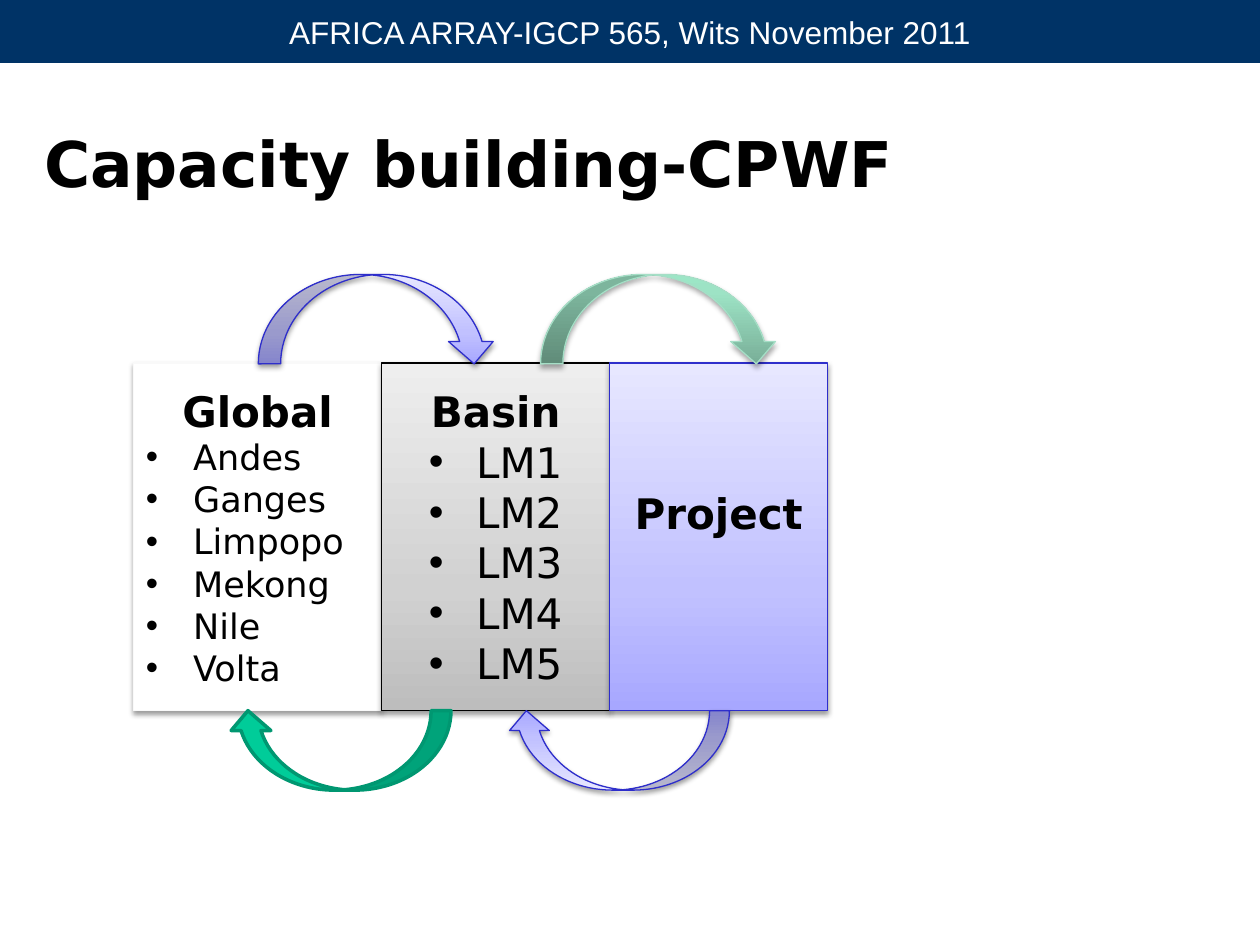
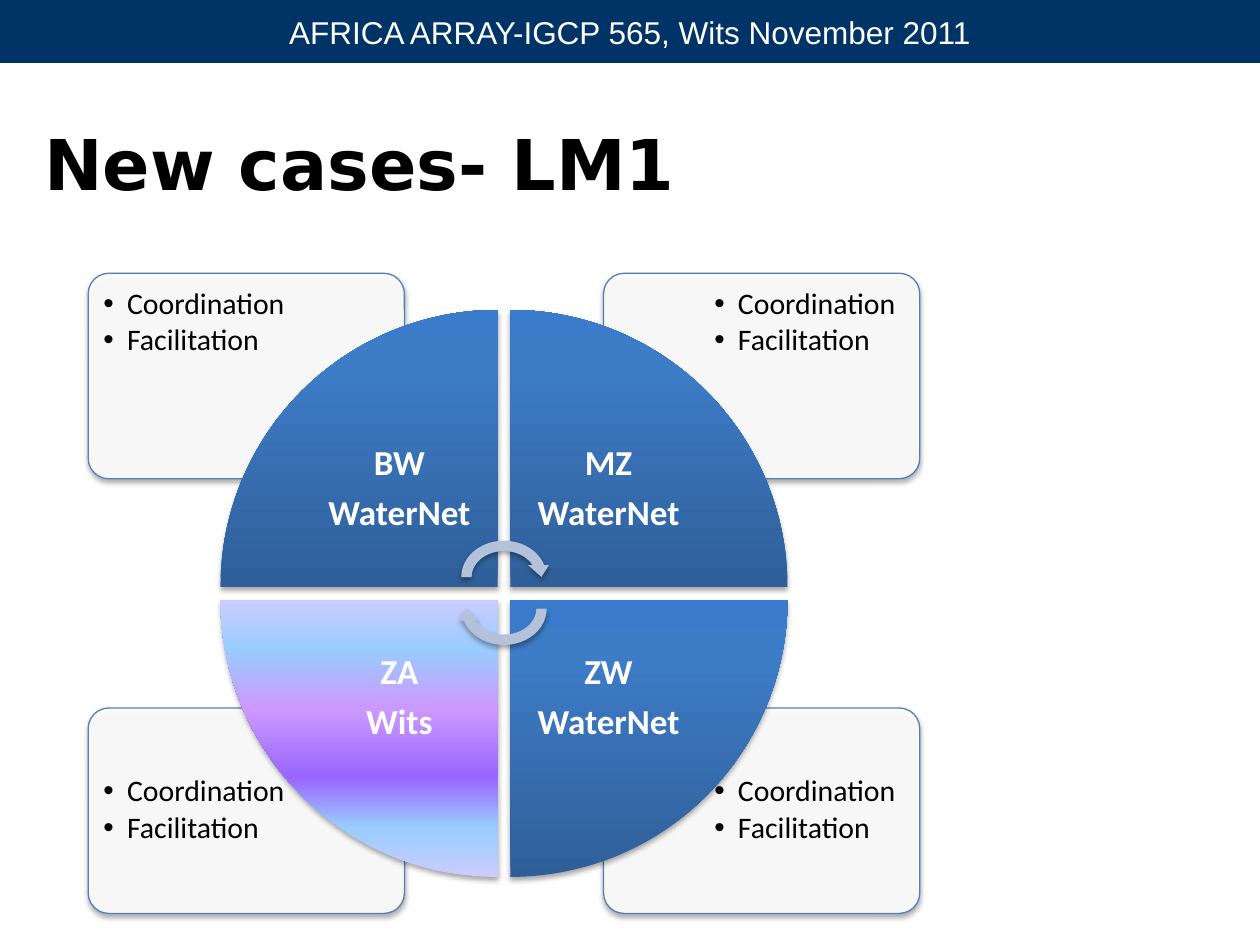
from pptx import Presentation
from pptx import util as u
from pptx.dml.color import RGBColor
from pptx.enum import shapes, text
from pptx.oxml import parse_xml
from pptx.oxml.ns import nsdecls, qn

Pt = u.Pt
Shape, Align, Anchor = shapes.MSO_SHAPE, text.PP_ALIGN, text.MSO_ANCHOR

# Content
EVENT = "AFRICA ARRAY-IGCP 565, Wits November 2011"
LILAC = [(0, "A7A7FF"), (35, "C1C1FF"), (100, "E7E7FF")]
GREY = [(0, "BDBDBD"), (35, "D1D1D1"), (100, "EEEEEE")]
MINT = [(0, "79AF98"), (80, "9DE3C5"), (100, "9CE6C6")]
BLUE = [(0, "2F5F99"), (80, "3D7CC7"), (100, "3A7CCB")]
RAINBOW = [(0, "CCCCFF"), (18, "99CCFF"), (36, "9966FF"),
           (61, "CC99FF"), (82, "99CCFF"), (100, "CCCCFF")]
SOFT, DEEP = (38, 1.6), (35, 1.8)  # shadow opacity in percent, distance

LEVELS = [  # heading, members, member size, member alignment, width, fill, line
    ("Global", ["Andes", "Ganges", "Limpopo", "Mekong", "Nile", "Volta"],
     20, Align.JUSTIFY, 141.8, "FFFFFF", "F9F9F9"),
    ("Basin", ["LM1", "LM2", "LM3", "LM4", "LM5"],
     24, Align.CENTER, 130.3, GREY, "000000"),
    ("Project", [], 24, Align.CENTER, 124.6, LILAC, "2E2ECB"),
]
FORWARD_ARROWS = [  # left, fill, line, line width, shadow
    (147.6, LILAC, "2E2ECB", 0.75, SOFT),
    (308.9, MINT, "A5DEC6", 0.75, DEEP),
]
RETURN_ARROWS = [
    (289.4, LILAC, "2E2ECB", 0.75, SOFT),
    (130.3, "00CC99", "009771", 2, None),
]
CASES = [  # country, partner, column, row, fill; clockwise from top left
    ("BW", "WaterNet", 0, 0, BLUE),
    ("MZ", "WaterNet", 1, 0, BLUE),
    ("ZW", "WaterNet", 1, 1, BLUE),
    ("ZA", "Wits", 0, 1, RAINBOW),
]
ROLES = ["Coordination", "Facilitation"]


def rgb(value):
    return RGBColor.from_string(value)


def points(*lengths):
    return [Pt(round(length, 2)) for length in lengths]


def paint(shape, fill, opacity=100, turns=True):
    """Fill with a hex colour, or with (percent, colour) stops from the bottom up."""
    if isinstance(fill, str):
        shape.fill.solid()
        shape.fill.fore_color.rgb = rgb(fill)
        if opacity < 100:
            colour = shape._element.spPr.find(qn("a:solidFill"))[0]
            colour.append(parse_xml(f'<a:alpha {nsdecls("a")} val="{opacity * 1000}"/>'))
        return
    shape.fill.gradient()
    shape.fill.gradient_angle = 90
    gradient = shape._element.spPr.find(qn("a:gradFill"))
    gradient.set("rotWithShape", str(int(turns)))
    stops = gradient.find(qn("a:gsLst"))
    for stop in list(stops):
        stops.remove(stop)
    for percent, colour in fill:
        stops.append(parse_xml(f'<a:gs {nsdecls("a")} pos="{percent * 1000}">'
                               f'<a:srgbClr val="{colour}"/></a:gs>'))


def add_figure(slide, preset, box, fill, line=None, width=0.75, shadow=None,
               rotation=0, opacity=100, turns=True):
    figure = slide.shapes.add_shape(preset, *points(*box))
    figure.rotation = rotation
    paint(figure, fill, opacity, turns)
    if line:
        figure.line.color.rgb = rgb(line)
        figure.line.width = Pt(width)
    else:
        figure.line.fill.background()
    figure.shadow.inherit = False
    if shadow:
        alpha, distance = shadow
        figure._element.spPr.find(qn("a:effectLst")).append(parse_xml(
            f'<a:outerShdw {nsdecls("a")} blurRad="{Pt(3.1)}" dist="{Pt(distance)}" '
            f'dir="5400000" rotWithShape="0"><a:srgbClr val="000000">'
            f'<a:alpha val="{alpha * 1000}"/></a:srgbClr></a:outerShdw>'))
    return figure


def write(paragraph, words, size, font, colour="000000", bold=False,
          align=Align.LEFT, indent=0, after=None):
    """Fill a paragraph; an indent gives it a bullet, after is a share of the size."""
    paragraph.text = words
    paragraph.alignment = align
    if indent:
        properties = paragraph._p.get_or_add_pPr()
        properties.set("marL", str(Pt(indent)))
        properties.set("indent", str(-Pt(indent)))
        properties.append(parse_xml(f'<a:buFont {nsdecls("a")} typeface="Arial"/>'))
        properties.append(parse_xml(f'<a:buChar {nsdecls("a")} char="•"/>'))
    if after:
        paragraph.line_spacing = 0.9
        paragraph.space_after = Pt(round(size * after, 2))
    paragraph.font.size = Pt(size)
    paragraph.font.name = font
    paragraph.font.bold = bold
    paragraph.font.color.rgb = rgb(colour)


def add_label(slide, box, lines, inset, anchor=Anchor.TOP, **style):
    frame = slide.shapes.add_textbox(*points(*box)).text_frame
    frame.word_wrap = True
    frame.vertical_anchor = anchor
    frame.margin_left = frame.margin_right = Pt(inset)
    frame.margin_top = frame.margin_bottom = Pt(inset)
    for number, words in enumerate(lines):
        paragraph = frame.add_paragraph() if number else frame.paragraphs[0]
        write(paragraph, words, font="Calibri", **style)


def add_titled_slide(prs, heading, size):
    slide = prs.slides.add_slide(prs.slide_layouts[5])
    band = add_figure(slide, Shape.RECTANGLE, (0, 0, 720, 36), "003366")
    write(band.text_frame.paragraphs[0], EVENT, 18, "Arial", "FFFFFF", align=Align.CENTER)
    title = slide.shapes.title
    title.left, title.top, title.width, title.height = points(18, 48, 540, 90)
    title.text_frame.auto_size = text.MSO_AUTO_SIZE.NONE
    title.text_frame.vertical_anchor = Anchor.MIDDLE
    write(title.text_frame.paragraphs[0], heading, size, "DejaVu Sans", bold=True)
    return slide


def build_capacity(prs):
    slide = add_titled_slide(prs, "Capacity building-CPWF", 36)
    left, top, height = 76.3, 207.4, 198.7
    for heading, members, size, align, width, fill, line in LEVELS:
        level = add_figure(slide, Shape.RECTANGLE, (left, top, width, height),
                           fill, line, shadow=SOFT)
        frame = level.text_frame
        write(frame.paragraphs[0], heading, 24, "DejaVu Sans", bold=True, align=Align.CENTER)
        for member in members:
            write(frame.add_paragraph(), member, size, "DejaVu Sans", align=align, indent=27)
        if not members:
            frame.margin_bottom = Pt(31.6)
        left += width

    forward = (top - 50.6, 136.1, 51.1, 0, FORWARD_ARROWS)
    backward = (top + height, 127.4, 45.4, 180, RETURN_ARROWS)
    for arrow_top, width, rise, rotation, arrows in (forward, backward):
        for arrow_left, fill, line, weight, shadow in arrows:
            add_figure(slide, Shape.CURVED_DOWN_ARROW, (arrow_left, arrow_top, width, rise),
                       fill, line, weight, shadow, rotation)


def build_cases(prs):
    slide = add_titled_slide(prs, "New cases- LM1", 40)
    card_w, card_h, roles_w, roles_h, edge = 180.7, 117.4, 121.7, 82.8, 2.2
    for _, _, column, row, _ in CASES:
        left, top = 50.4 + column * 294.5, 156.2 + row * 248.4
        card = add_figure(slide, Shape.ROUNDED_RECTANGLE, (left, top, card_w, card_h),
                          "FFFFFF", "4F81BD", shadow=DEEP, opacity=90)
        card.adjustments[0] = 0.1
        roles_left = left + (card_w - roles_w - edge if column else edge)
        roles_top = top + (card_h - roles_h - edge if row else edge)
        add_label(slide, (roles_left, roles_top, roles_w, roles_h), ROLES, 6.5,
                  size=17, indent=13.5, after=0.15)

    radius, gap, name_size = 158.4, 7.2, 112.3
    pie_left, pie_top = 126, 177.1
    for quarter, (country, partner, column, row, fill) in enumerate(CASES):
        left = pie_left + column * (radius + gap)
        top = pie_top + row * (radius + gap)
        add_figure(slide, Shape.PIE_WEDGE, (left, top, radius, radius), fill,
                   shadow=DEEP, rotation=quarter * 90, turns=False)
        name_left = left + (0 if column else radius - name_size)
        name_top = top + (0 if row else radius - name_size)
        add_label(slide, (name_left, name_top, name_size, name_size), [country, partner],
                  11.4, Anchor.MIDDLE, size=20, colour="FFFFFF", bold=True,
                  align=Align.CENTER, after=0.35)

    cycle_w, cycle_h = 54.7, 47.5
    cycle_left = pie_left + radius + gap / 2 - cycle_w / 2
    for cycle_top, rotation in ((306, 0), (324, 180)):
        add_figure(slide, Shape.CIRCULAR_ARROW, (cycle_left, cycle_top, cycle_w, cycle_h),
                   "B3C1DB", shadow=DEEP, rotation=rotation)


def main():
    prs = Presentation()
    prs.slide_width, prs.slide_height = Pt(720), Pt(540)
    build_capacity(prs)
    build_cases(prs)
    prs.save("out.pptx")


if __name__ == "__main__":
    main()
